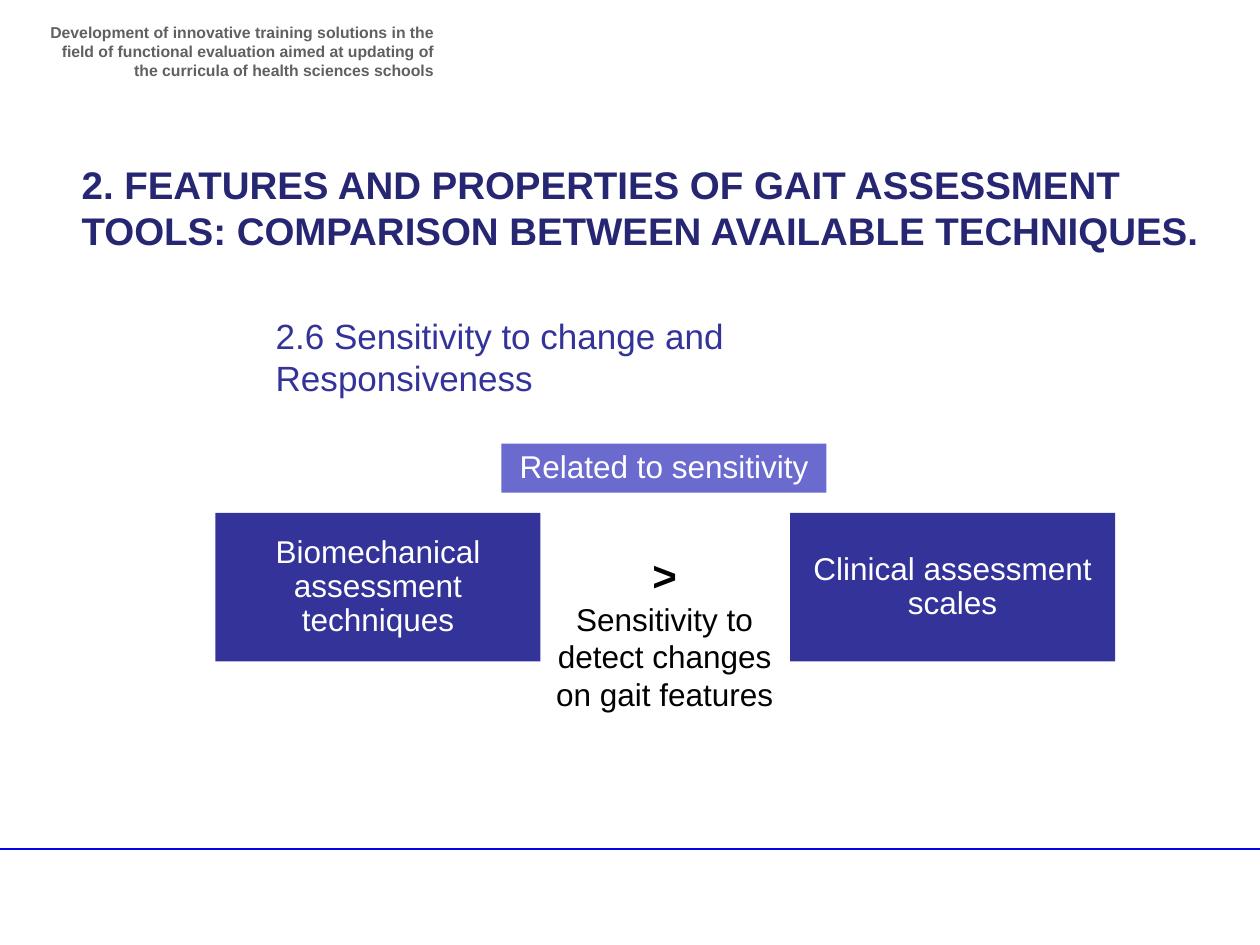
"""Build the slide on sensitivity to change of gait assessment tools."""
from lxml import etree
from pptx import Presentation
from pptx.dml.color import RGBColor
from pptx.enum.shapes import MSO_CONNECTOR, MSO_SHAPE
from pptx.enum.text import MSO_ANCHOR, PP_ALIGN
from pptx.oxml.ns import qn
from pptx.util import Inches, Pt

LEFT, CENTER, RIGHT = PP_ALIGN.LEFT, PP_ALIGN.CENTER, PP_ALIGN.RIGHT
MIDDLE = MSO_ANCHOR.MIDDLE
RECTANGLE = MSO_SHAPE.RECTANGLE
STRAIGHT = MSO_CONNECTOR.STRAIGHT

FONT = "Arial"
COLORS = {
    "header": "606060", "title": "262673", "indigo": "333399",
    "violet": "6B6BCF", "white": "FFFFFF", "black": "000000", "rule": "0404E6",
}

TEXTS = [
    ((0.28, 0.13, 3.26, 0.47), RIGHT, "header",
     [("Development of innovative training solutions in the ﬁeld of functional "
       "evaluation aimed at updating of the curricula of health sciences schools", 9, True)]),
    ((0.55, 1.23, 9.09, 0.84), LEFT, "title",
     [("2. FEATURES AND PROPERTIES OF GAIT ASSESSMENT TOOLS: "
       "COMPARISON BETWEEN AVAILABLE TECHNIQUES.", 22, True)]),
    ((2.09, 2.45, 5.7, 0.77), LEFT, "indigo",
     [("2.6 Sensitivity to change and Responsiveness", 20, False)]),
    ((4.29, 4.31, 1.97, 1.41), CENTER, "black",
     [(">", 24, True), ("Sensitivity to detect changes on gait features", 18, False)]),
]

BOX_WIDTH = 2.58
BOXES = [
    ("Biomechanical assessment techniques", 1.71, 4.07, 1.18, "indigo"),
    ("Related to sensitivity", 3.98, 3.52, 0.39, "violet"),
    ("Clinical assessment scales", 6.27, 4.07, 1.18, "indigo"),
]
RULE_TOP = 6.74


def rgb(name):
    return RGBColor.from_string(COLORS[name])


def write(frame, paragraphs, align, color):
    frame.word_wrap = True
    frame.text = "\n".join(text for text, _, _ in paragraphs)
    for paragraph, (_, size, bold) in zip(frame.paragraphs, paragraphs):
        paragraph.alignment = align
        for run in paragraph.runs:
            run.font.name = FONT
            run.font.size = Pt(size)
            run.font.bold = bold
            run.font.color.rgb = rgb(color)


def add_box(slide, label, left, top, height, fill):
    box = slide.shapes.add_shape(
        RECTANGLE, Inches(left), Inches(top), Inches(BOX_WIDTH), Inches(height))
    box.shadow.inherit = False
    box.fill.solid()
    box.fill.fore_color.rgb = rgb(fill)
    box.line.fill.background()
    frame = box.text_frame
    frame.vertical_anchor = MIDDLE
    frame.margin_left = frame.margin_right = Inches(0.01)
    frame.margin_top = frame.margin_bottom = Inches(0.01)
    write(frame, [(label, 18, False)], CENTER, "white")
    frame.paragraphs[0].line_spacing = 0.9


def add_rule(slide, width):
    rule = slide.shapes.add_connector(
        STRAIGHT, 0, Inches(RULE_TOP), width, Inches(RULE_TOP))
    rule.line.color.rgb = rgb("rule")
    rule.line.width = Pt(1)
    etree.SubElement(rule._element.spPr, qn("a:effectLst"))


def main():
    deck = Presentation()
    deck.slide_width, deck.slide_height = Inches(10), Inches(7.5)
    slide = deck.slides.add_slide(deck.slide_layouts[6])
    add_rule(slide, deck.slide_width)
    for place, align, color, paragraphs in TEXTS:
        area = slide.shapes.add_textbox(*map(Inches, place))
        write(area.text_frame, paragraphs, align, color)
    for box in BOXES:
        add_box(slide, *box)
    deck.save("out.pptx")


if __name__ == "__main__":
    main()
